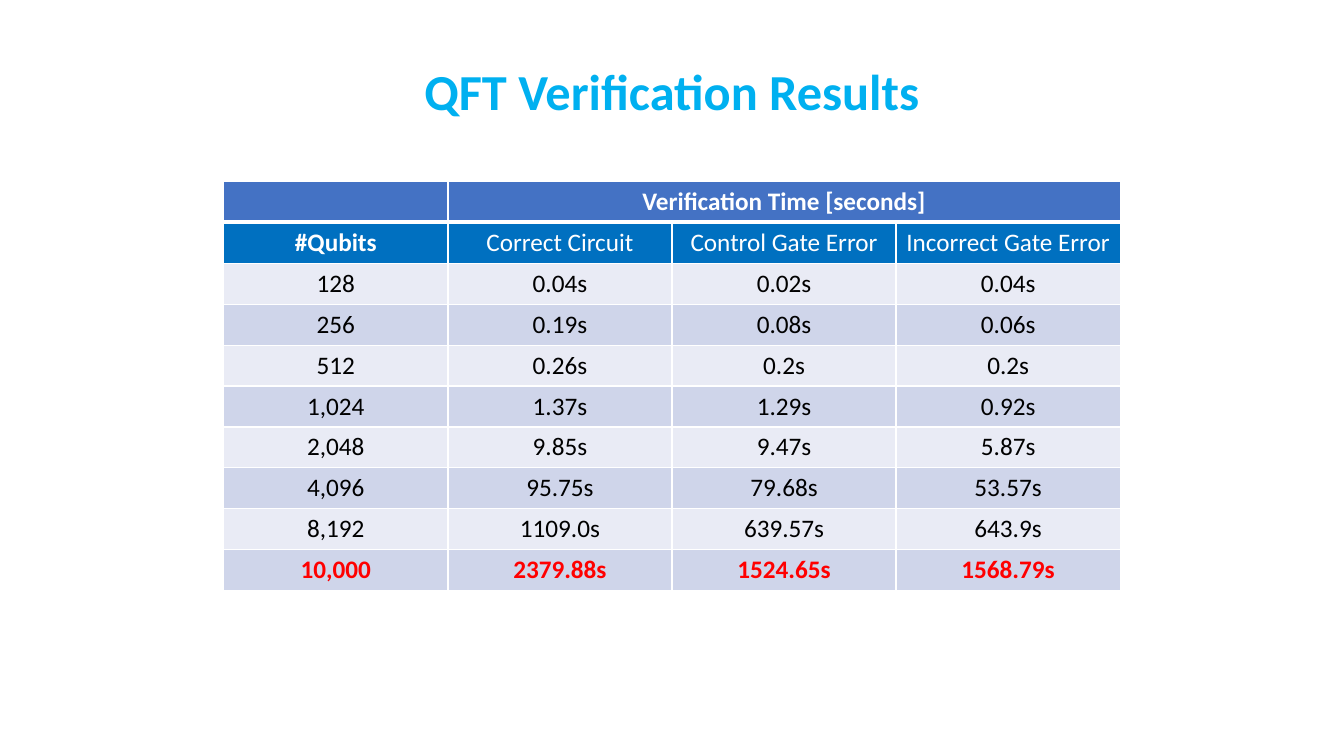
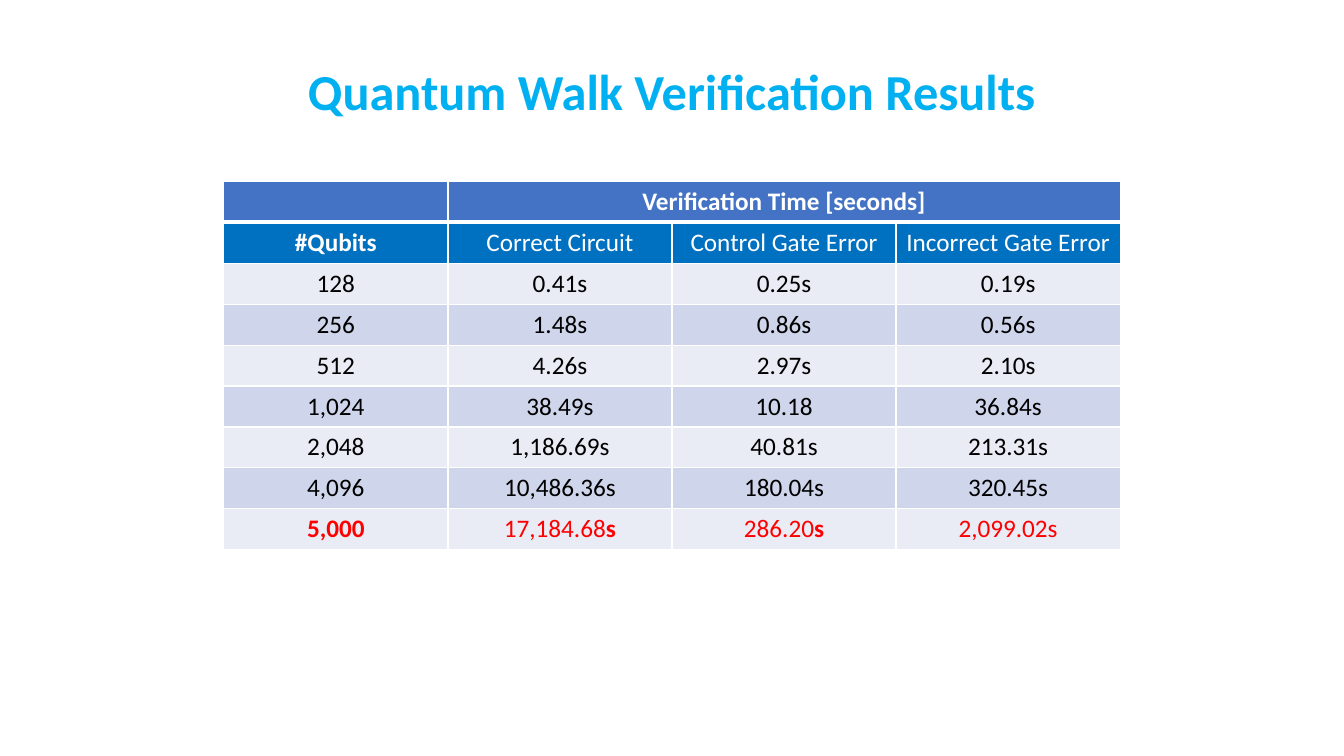
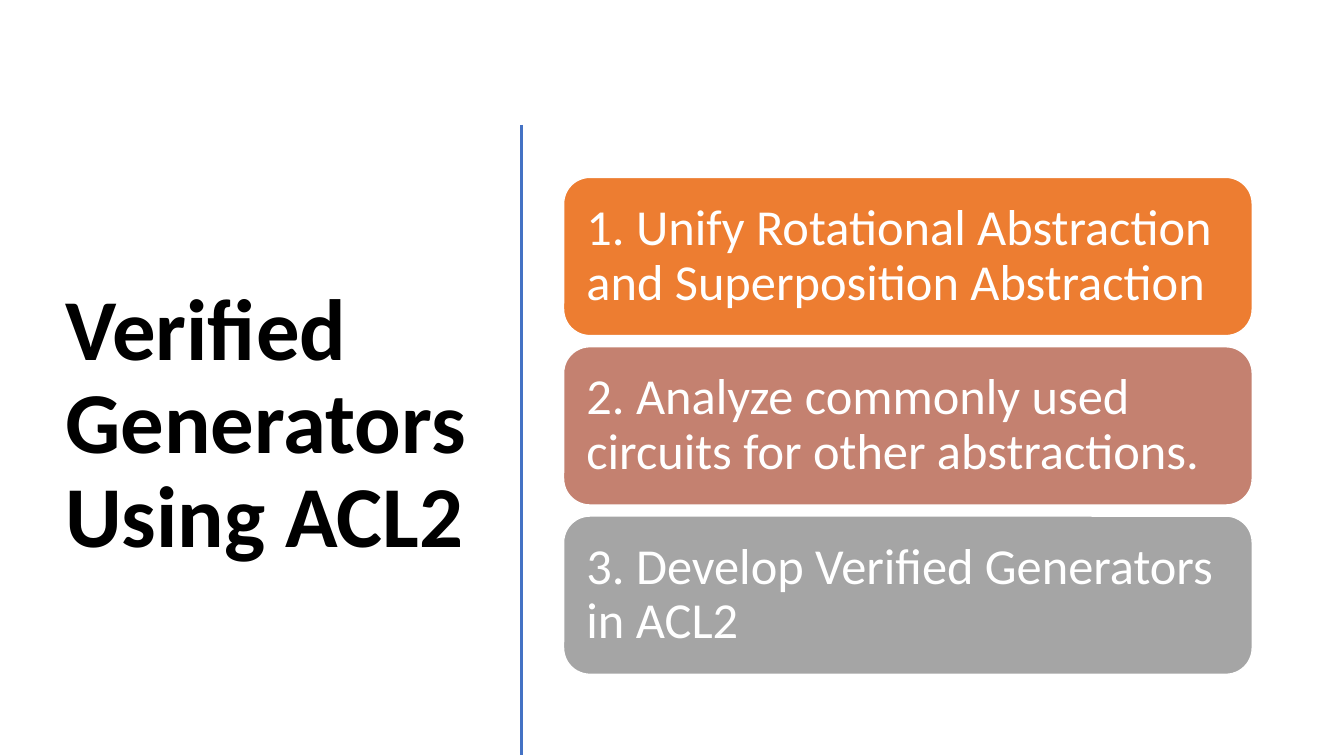
from lxml import etree
from pptx import Presentation
from pptx.dml.color import RGBColor
from pptx.enum.shapes import MSO_CONNECTOR, MSO_SHAPE
from pptx.enum.text import MSO_ANCHOR, PP_ALIGN
from pptx.oxml.ns import qn
from pptx.util import Inches, Pt

CENTER, LEFT = PP_ALIGN.CENTER, PP_ALIGN.LEFT
MIDDLE = MSO_ANCHOR.MIDDLE
ROUND = MSO_SHAPE.ROUNDED_RECTANGLE
STRAIGHT = MSO_CONNECTOR.STRAIGHT

WHITE = RGBColor(0xFF, 0xFF, 0xFF)
BLACK = RGBColor(0x00, 0x00, 0x00)
RED = RGBColor(0xFF, 0x00, 0x00)
SKY = RGBColor(0x00, 0xB0, 0xF0)
BLUE = RGBColor(0x44, 0x72, 0xC4)
DEEP = RGBColor(0x00, 0x70, 0xC0)
PALE = RGBColor(0xE9, 0xEB, 0xF5)
MIST = RGBColor(0xCF, 0xD5, 0xEA)
ORANGE = RGBColor(0xED, 0x7D, 0x31)
ROSE = RGBColor(0xC4, 0x81, 0x70)
GRAY = RGBColor(0xA5, 0xA5, 0xA5)

WIDTH, HEIGHT = 13.33, 7.5
ROW = 0.406

# Text between asterisks is bold.
HEAD = [
    ["", "*Verification Time [seconds]*", "", ""],
    ["*#Qubits*", "Correct Circuit", "Control Gate Error", "Incorrect Gate Error"],
]
QFT = [
    ["128", "0.04s", "0.02s", "0.04s"],
    ["256", "0.19s", "0.08s", "0.06s"],
    ["512", "0.26s", "0.2s", "0.2s"],
    ["1,024", "1.37s", "1.29s", "0.92s"],
    ["2,048", "9.85s", "9.47s", "5.87s"],
    ["4,096", "95.75s", "79.68s", "53.57s"],
    ["8,192", "1109.0s", "639.57s", "643.9s"],
    ["*10,000*", "*2379.88s*", "*1524.65s*", "*1568.79s*"],
]
WALK = [
    ["128", "0.41s", "0.25s", "0.19s"],
    ["256", "1.48s", "0.86s", "0.56s"],
    ["512", "4.26s", "2.97s", "2.10s"],
    ["1,024", "38.49s", "10.18", "36.84s"],
    ["2,048", "1,186.69s", "40.81s", "213.31s"],
    ["4,096", "10,486.36s", "180.04s", "320.45s"],
    ["*5,000*", "17,184.68*s*", "286.20*s*", "2,099.02s"],
]
STEPS = [
    ("1. Unify Rotational Abstraction and Superposition Abstraction", ORANGE),
    ("2. Analyze commonly used circuits for other abstractions.", ROSE),
    ("3. Develop Verified Generators in ACL2", GRAY),
]


class Deck:
    font = "Calibri"

    def __init__(self):
        self.prs = Presentation()
        self.prs.slide_width = Inches(WIDTH)
        self.prs.slide_height = Inches(HEIGHT)
        self.shapes = None

    def slide(self):
        layout = self.prs.slide_layouts[6]
        self.shapes = self.prs.slides.add_slide(layout).shapes

    def style(self, para, size, color, align):
        para.alignment = align
        for run in para.runs:
            run.font.name = self.font
            run.font.size = Pt(size)
            run.font.color.rgb = color

    def text(self, text, box, size, color, align=LEFT):
        """Add a bold text box."""
        frame = self.shapes.add_textbox(*map(Inches, box)).text_frame
        frame.word_wrap = True
        frame.text = text
        para = frame.paragraphs[0]
        self.style(para, size, color, align)
        para.runs[0].font.bold = True
        return frame

    def title(self, text, width):
        box = ((WIDTH - width) / 2, 0.55, width, 0.71)
        self.text(text, box, 36, SKY, CENTER).word_wrap = False

    def border(self, cell, top, base):
        """Draw white cell edges, with the given top and bottom widths."""
        props = cell._tc.get_or_add_tcPr()
        for side, width in (("L", 1), ("R", 1), ("T", top), ("B", base)):
            line = etree.SubElement(props, qn("a:ln" + side), w=str(Pt(width)))
            fill = etree.SubElement(line, qn("a:solidFill"))
            etree.SubElement(fill, qn("a:srgbClr"), val=str(WHITE))

    def cell(self, cell, text, fill, color):
        cell.fill.solid()
        cell.fill.fore_color.rgb = fill
        para = cell.text_frame.paragraphs[0]
        for i, part in enumerate(text.split("*")):
            if part:
                run = para.add_run()
                run.text = part
                run.font.bold = i % 2 == 1
        self.style(para, 18, color, CENTER)

    def table(self, data):
        rows = HEAD + data
        last = len(rows) - 1
        grid = self.shapes.add_table(
            len(rows), 4, Inches(2.22), Inches(1.8),
            Inches(8.89), Inches(ROW * len(rows))).table
        grid.first_row = grid.horz_banding = False
        grid.cell(0, 1).merge(grid.cell(0, 3))
        for r, row in enumerate(rows):
            if r < len(HEAD):
                fill, color = (BLUE, DEEP)[r], WHITE
            else:
                fill = (PALE, MIST)[r % 2]
                color = RED if r == last else BLACK
            for c, text in enumerate(row):
                cell = grid.cell(r, c)
                self.border(cell, 3 if r == 1 else 1, 3 if r == 0 else 1)
                self.cell(cell, text, fill, color)

    def rule(self, x, top, base):
        line = self.shapes.add_connector(
            STRAIGHT, Inches(x), Inches(top), Inches(x), Inches(base))
        line.line.color.rgb = BLUE
        line.line.width = Pt(2)
        etree.SubElement(line._element.spPr, qn("a:effectLst"))

    def card(self, text, fill, box):
        card = self.shapes.add_shape(ROUND, *map(Inches, box))
        card.shadow.inherit = False
        card.fill.solid()
        card.fill.fore_color.rgb = fill
        card.line.color.rgb = WHITE
        card.line.width = Pt(1)
        frame = card.text_frame
        frame.word_wrap = True
        frame.vertical_anchor = MIDDLE
        frame.margin_left = frame.margin_right = Inches(0.15)
        frame.margin_top = frame.margin_bottom = Inches(0.15)
        frame.text = text
        para = frame.paragraphs[0]
        para.line_spacing = 0.9
        self.style(para, 36, WHITE, LEFT)


def main():
    deck = Deck()
    for title, width, data in (
            ("QFT Verification Results", 5.4, QFT),
            ("Quantum Walk Verification Results", 7.73, WALK)):
        deck.slide()
        deck.title(title, width)
        deck.table(data)

    deck.slide()
    frame = deck.text("Verified Generators Using ACL2",
                      (0.55, 1.17, 4.5, 6.11), 62, BLACK)
    frame.vertical_anchor = MIDDLE
    frame.paragraphs[0].line_spacing = 0.9
    deck.rule(5.17, 1.24, 7.49)
    for i, (text, fill) in enumerate(STEPS):
        deck.card(text, fill, (5.59, 1.76 + 1.68 * i, 6.83, 1.57))

    deck.prs.save("out.pptx")


if __name__ == "__main__":
    main()
